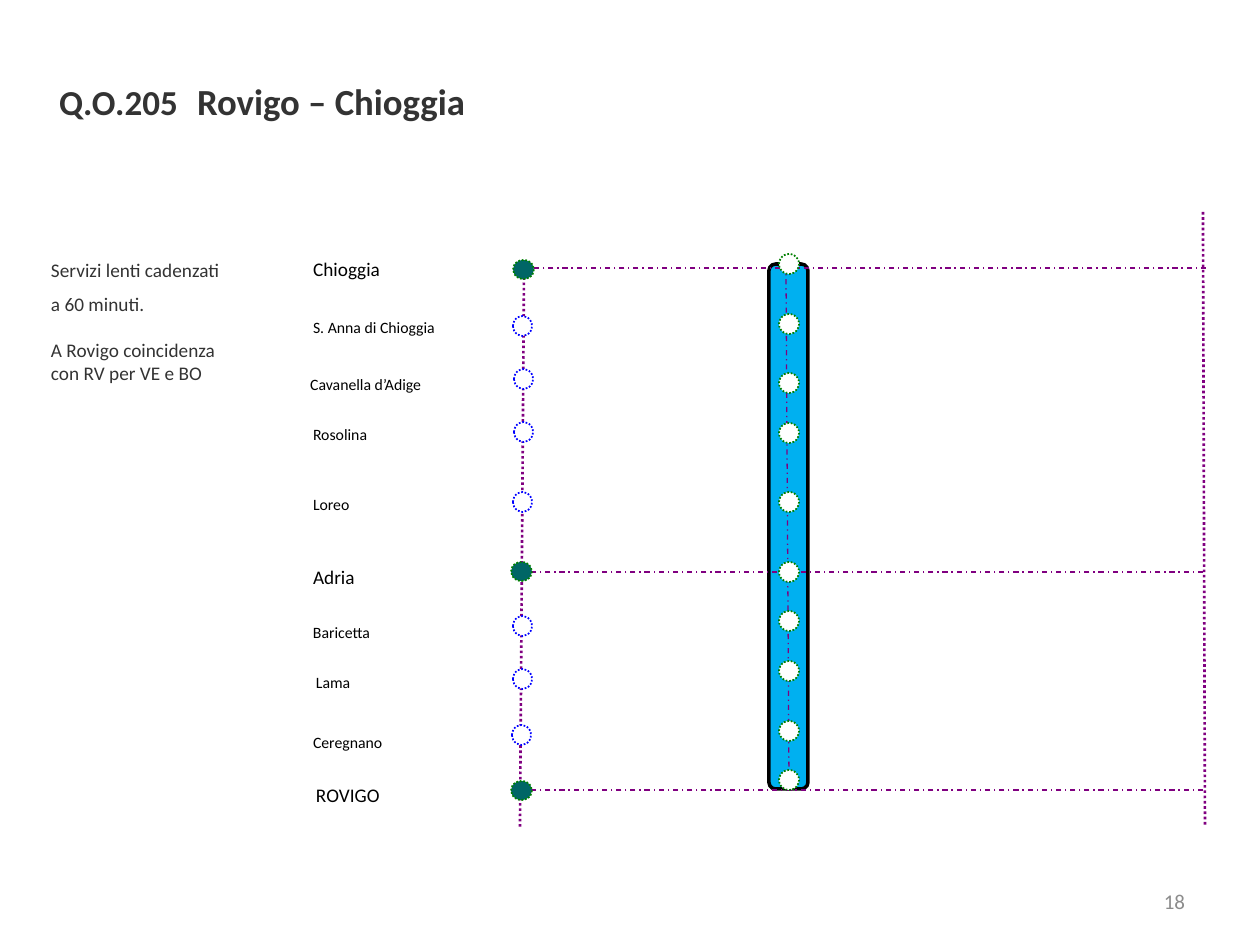
import lxml.etree
import pptx
import pptx.dml.color
import pptx.enum.dml
import pptx.enum.shapes
import pptx.enum.text
import pptx.oxml.ns
import pptx.util
from dataclasses import dataclass

ALIGN = pptx.enum.text.PP_ALIGN
ANCHOR = pptx.enum.text.MSO_ANCHOR
FIT = pptx.enum.text.MSO_AUTO_SIZE
DASH = pptx.enum.dml.MSO_LINE
SHAPE = pptx.enum.shapes.MSO_SHAPE


@dataclass
class Theme:
    font: str = "Calibri"
    heading: str = "333333"
    label: str = "000000"
    number: str = "8C8C8C"
    route: str = "800080"
    train: str = "00B0F0"
    white: str = "FFFFFF"
    major: str = "006666"
    green: str = "008000"
    blue: str = "0000FF"
    code_size: int = 20
    gap_size: int = 24
    title_size: int = 21
    body_size: int = 11
    minor_size: int = 9
    number_size: int = 12


T = Theme()
TITLE = [("Q.O.205", T.code_size), ("\t", T.gap_size), ("Rovigo – Chioggia", T.title_size)]
TITLE_TAB = 138
NOTES = [
    ((40, 253, 311, 58), ["Servizi lenti cadenzati"]),
    ((40, 287, 272, 127), ["a 60 minuti.", "A Rovigo coincidenza", "con RV per VE e BO"]),
]
NOTE_GAP_BEFORE = "A Rovigo coincidenza"

# name, major, label (x, y, width), route dot (x, y), train stop y
STATIONS = [
    ("Chioggia", True, (302, 244, 96), (513, 260), 254),
    ("S. Anna di Chioggia", False, (302, 306, 193), (513, 316), 314),
    ("Cavanella d’Adige", False, (295, 363, 137), (514, 369), 373),
    ("Rosolina", False, (302, 413, 82), (514, 422), 423),
    ("Loreo", False, (302, 483, 159), (513, 492), 492),
    ("Adria", True, (302, 552, 70), (511, 562), 562),
    ("Baricetta", False, (302, 611, 86), (513, 616), 611),
    ("Lama", False, (305, 661, 62), (513, 669), 661),
    ("Ceregnano", False, (302, 721, 97), (512, 725), 721),
    ("ROVIGO", True, (305, 770, 92), (511, 781), 770),
]
RIGHT_ALIGNED = "Cavanella d’Adige"
TRAIN_BAR = (769, 264, 39, 525)
STOP_X, STOP_SIZE = 779, 20
DOTTED = [(1203, 212, 1205, 827), (524, 272, 520, 827)]
DASHED = [(1206, 268, 523, 268), (1203, 572, 520, 572),
          (1203, 790, 520, 790), (786, 265, 789, 780)]


def px(n):
    return round(n * 914400 / 126)


def box(values):
    return [px(v) for v in values]


def rgb(value):
    return pptx.dml.color.RGBColor.from_string(value)


def apply(target, values):
    for name, value in values.items():
        setattr(target, name, value)


def add_run(p, text, size, color, bold=False):
    r = p.add_run()
    r.text = text
    apply(r.font, {"name": T.font, "size": pptx.util.Pt(size), "bold": bold})
    r.font.color.rgb = rgb(color)


def set_frame(tf, **extra):
    apply(tf, {"margin_left": px(11), "margin_right": px(11), "margin_top": px(5),
               "margin_bottom": px(5), "word_wrap": True,
               "vertical_anchor": ANCHOR.TOP, **extra})


def add_text(s, at, lines, size, color, para=None, **frame):
    tf = s.shapes.add_textbox(*box(at)).text_frame
    set_frame(tf, **frame)
    for i, text in enumerate(lines):
        p = tf.add_paragraph() if i else tf.paragraphs[0]
        apply(p, para or {})
        if text == NOTE_GAP_BEFORE:
            p.space_before = pptx.util.Pt(13)
        add_run(p, text, size, color)


def set_line(shape, color, width, dash=None):
    shape.line.color.rgb = rgb(color)
    shape.line.width = pptx.util.Pt(width)
    if dash:
        shape.line.dash_style = dash


def add_shape(s, kind, at, fill, line, width, dash=None):
    sp = s.shapes.add_shape(kind, *box(at))
    sp.shadow.inherit = False
    sp.fill.solid()
    sp.fill.fore_color.rgb = rgb(fill)
    set_line(sp, line, width, dash)


def add_dot(s, at, fill, line):
    add_shape(s, SHAPE.OVAL, at, fill, line, 1, DASH.ROUND_DOT)


def add_line(s, ends, width, dash):
    c = s.shapes.add_connector(pptx.enum.shapes.MSO_CONNECTOR.STRAIGHT, *box(ends))
    set_line(c, T.route, width, dash)
    lxml.etree.SubElement(c._element.spPr, pptx.oxml.ns.qn("a:effectLst"))


def add_title(s):
    title = s.shapes.title
    apply(title, dict(zip(("left", "top", "width", "height"), box((48, 68, 1187, 62)))))
    set_frame(title.text_frame, auto_size=FIT.NONE)
    p = title.text_frame.paragraphs[0]
    p.alignment = ALIGN.LEFT
    for text, size in TITLE:
        add_run(p, text, size, T.heading, True)
    tabs = lxml.etree.SubElement(p._p.get_or_add_pPr(), pptx.oxml.ns.qn("a:tabLst"))
    lxml.etree.SubElement(tabs, pptx.oxml.ns.qn("a:tab"), pos=str(px(TITLE_TAB)), algn="l")


def add_station(s, name, major, label, dot, stop_y):
    x, y, w = label
    para = {"line_spacing": 1.35,
            "alignment": ALIGN.RIGHT if name == RIGHT_ALIGNED else ALIGN.LEFT}
    add_text(s, (x, y, w, 40 if major else 37), [name],
             T.body_size if major else T.minor_size, T.label, para,
             auto_size=FIT.SHAPE_TO_FIT_TEXT)
    if major:
        add_dot(s, (*dot, 21, 19), T.major, T.green)
    else:
        add_dot(s, (*dot, 19, 20), T.white, T.blue)
    add_dot(s, (STOP_X, stop_y, STOP_SIZE, STOP_SIZE), T.white, T.green)


def main():
    prs = pptx.Presentation()
    apply(prs, {"slide_width": px(1260), "slide_height": px(945)})
    s = prs.slides.add_slide(prs.slide_layouts[5])
    add_title(s)
    add_shape(s, SHAPE.ROUNDED_RECTANGLE, TRAIN_BAR, T.train, T.label, 2)
    for at, lines in NOTES:
        add_text(s, at, lines, T.body_size, T.heading)
    for ends in DOTTED:
        add_line(s, ends, 1.5, DASH.ROUND_DOT)
    for ends in DASHED:
        add_line(s, ends, 0.75, DASH.DASH_DOT)
    for station in STATIONS:
        add_station(s, *station)
    add_text(s, (902, 876, 294, 50), ["18"], T.number_size, T.number,
             {"alignment": ALIGN.RIGHT}, vertical_anchor=ANCHOR.MIDDLE)
    prs.save("out.pptx")


if __name__ == "__main__":
    main()
